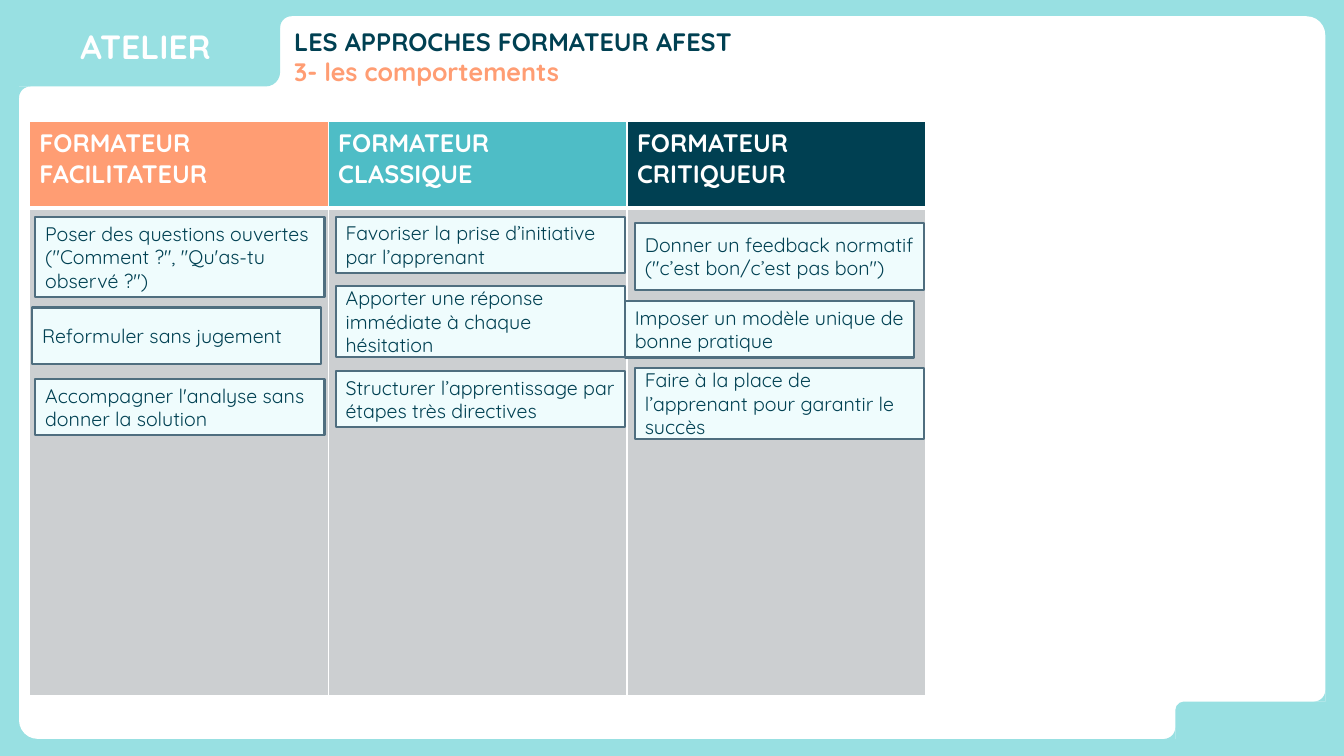
from math import cos, pi, sin

from lxml import etree
from pptx import Presentation
from pptx.dml.color import RGBColor
from pptx.enum.shapes import MSO_SHAPE as Preset
from pptx.enum.text import MSO_ANCHOR as Anchor, MSO_AUTO_SIZE as AutoSize, PP_ALIGN as Align
from pptx.oxml.ns import qn
from pptx.util import Cm, Pt

COLORS = {
    "frame": "98E0E2", "white": "FFFFFF", "navy": "004052", "orange": "FF9D73",
    "teal": "4EBDC6", "grey": "CCCFD1", "card": "EFFCFD", "outline": "4F6E7F",
}


def paint(shape, fill, line=None):
    shape.shadow.inherit = False
    shape.fill.solid()
    shape.fill.fore_color.rgb = RGBColor.from_string(COLORS[fill])
    if line:
        shape.line.color.rgb = RGBColor.from_string(COLORS[line])
        shape.line.width = Pt(1.5)
    else:
        shape.line.fill.background()


def write(frame, lines, size, bold=True, align=Align.LEFT):
    """Write (text, colour) pairs, one paragraph each."""
    frame.word_wrap = True
    for index, (text, color) in enumerate(lines):
        paragraph = frame.add_paragraph() if index else frame.paragraphs[0]
        paragraph.alignment = align
        run = paragraph.add_run()
        run.text = text
        run.font.name = "Quicksand"
        run.font.size = Pt(size)
        run.font.bold = bold
        run.font.color.rgb = RGBColor.from_string(COLORS[color])


prs = Presentation()
prs.slide_width, prs.slide_height = Cm(33.87), Cm(19.05)
slide = prs.slides.add_slide(prs.slide_layouts[5])
shapes = slide.shapes

# Frame: coloured background, white page and its two notches
slide.background.fill.solid()
slide.background.fill.fore_color.rgb = RGBColor.from_string(COLORS["frame"])
page = shapes.add_shape(Preset.ROUNDED_RECTANGLE, Cm(0.48), Cm(0.41), Cm(32.92), Cm(18.21))
page.adjustments[0] = 0.026
paint(page, "white")
for left, top, width, height in [(29.62, 17.68, 4.17, 1.3), (0, 0, 7.06, 2.18)]:
    notch = shapes.add_shape(
        Preset.ROUNDED_RECTANGLE, Cm(left), Cm(top), Cm(width), Cm(height))
    paint(notch, "frame")

# Rounded inner corners beside the notches: corner point and direction of the page
RADIUS, STEPS = 0.29, 12
for x, y, way in [(29.62, 18.62, -1), (33.4, 17.68, -1), (0.48, 2.18, 1), (7.06, 0.41, 1)]:
    arc = []
    for step in range(STEPS + 1):
        angle = pi / 2 * step / STEPS
        arc.append((Cm(x + way * RADIUS * (1 - cos(angle))),
                    Cm(y + way * RADIUS * (1 - sin(angle)))))
    outline = shapes.build_freeform(Cm(x), Cm(y))
    outline.add_line_segments(arc, close=True)
    paint(outline.convert_to_shape(), "frame")

# Title, brought in front of the frame
title = shapes.title
title.element.getparent().append(title.element)
title.left, title.top, title.width, title.height = Cm(7.16), Cm(0.53), Cm(25.4), Cm(1.8)
title.text_frame.vertical_anchor = Anchor.TOP
title.text_frame.auto_size = AutoSize.NONE
write(title.text_frame,
      [("LES APPROCHES FORMATEUR AFEST", "navy"), ("3- les comportements", "orange")], 18)

# Workshop label
workshop = shapes.add_shape(Preset.RECTANGLE, Cm(0.61), Cm(0.53), Cm(6.12), Cm(1.27))
paint(workshop, "frame")
workshop.text_frame.vertical_anchor = Anchor.MIDDLE
write(workshop.text_frame, [("ATELIER", "white")], 24, align=Align.CENTER)

# Table of the three trainer profiles
profiles = [("FACILITATEUR", "orange"), ("CLASSIQUE", "teal"), ("CRITIQUEUR", "navy")]
table = shapes.add_table(2, 3, Cm(0.74), Cm(3.07), Cm(22.59), Cm(14.45)).table
table.horz_banding = False
table.rows[0].height, table.rows[1].height = Cm(2.18), Cm(12.27)
for col, (profile, color) in enumerate(profiles):
    table.columns[col].width = Cm(7.53)
    write(table.cell(0, col).text_frame, [("FORMATEUR", "white"), (profile, "white")], 18)
    for row, fill in enumerate([color, "grey"]):
        cell = table.cell(row, col)
        props = cell._tc.get_or_add_tcPr()
        for side in "LRTB":
            thick = (row, side) in [(0, "B"), (1, "T")]
            border = etree.SubElement(props, qn(f"a:ln{side}"), w=str(Pt(3 if thick else 1)))
            solid = etree.SubElement(border, qn("a:solidFill"))
            etree.SubElement(solid, qn("a:srgbClr"), val=COLORS["white"])
        cell.fill.solid()
        cell.fill.fore_color.rgb = RGBColor.from_string(COLORS[fill])

# Behaviour cards: left, top, height, text
behaviours = [
    (0.89, 5.46, 2.03, "Poser des questions ouvertes (\"Comment ?\", \"Qu'as-tu observé ?\")"),
    (0.81, 7.75, 1.42, "Reformuler sans jugement"),
    (0.89, 9.55, 1.42, "Accompagner l'analyse sans donner la solution"),
    (8.46, 7.21, 1.78, "Apporter une réponse immédiate à chaque hésitation"),
    (15.75, 7.59, 1.42, "Imposer un modèle unique de bonne pratique"),
    (8.46, 5.46, 1.42, "Favoriser la prise d’initiative par l’apprenant"),
    (16, 5.61, 1.7, "Donner un feedback normatif (\"c’est bon/c’est pas bon\")"),
    (8.46, 9.35, 1.42, "Structurer l’apprentissage par étapes très directives"),
    (16, 9.27, 1.8, "Faire à la place de l’apprenant pour garantir le succès"),
]
for left, top, height, behaviour in behaviours:
    card = shapes.add_shape(Preset.RECTANGLE, Cm(left), Cm(top), Cm(7.29), Cm(height))
    paint(card, "card", "outline")
    card.text_frame.vertical_anchor = Anchor.MIDDLE
    write(card.text_frame, [(behaviour, "navy")], 14, bold=False)

prs.save("out.pptx")
